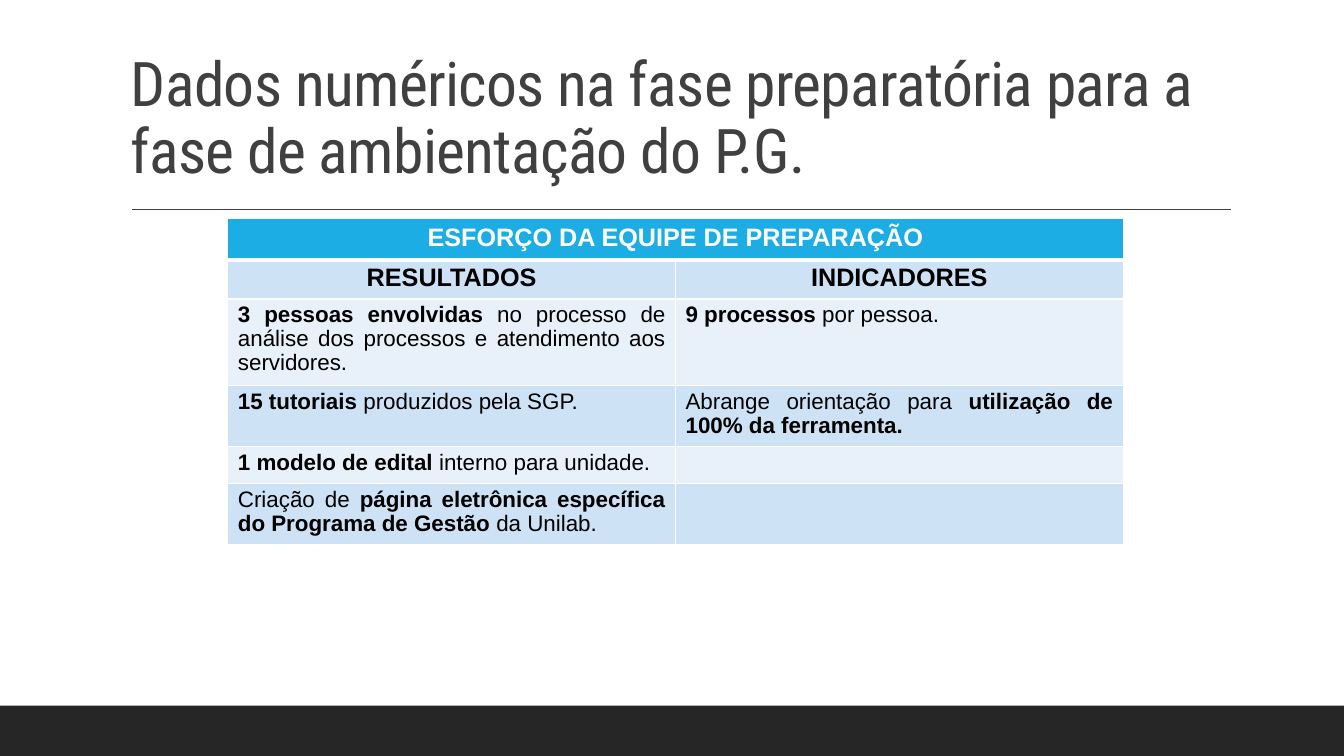
from lxml import etree
from pptx import Presentation
from pptx.dml.color import RGBColor
from pptx.enum.shapes import MSO_CONNECTOR, MSO_SHAPE
from pptx.enum.text import MSO_ANCHOR, PP_ALIGN
from pptx.oxml.ns import qn
from pptx.util import Inches, Pt

CENTER, JUSTIFY = PP_ALIGN.CENTER, PP_ALIGN.JUSTIFY
BOTTOM = MSO_ANCHOR.BOTTOM
RECTANGLE, STRAIGHT = MSO_SHAPE.RECTANGLE, MSO_CONNECTOR.STRAIGHT

COLORS = {"white": "FFFFFF", "black": "000000", "gray": "404040", "footer": "262626",
          "header": "1CADE4", "dark_band": "CDE3F5", "light_band": "E8F1FA"}
TITLE = "Dados numéricos na fase preparatória para a fase de ambientação do P.G."
BOLD, PLAIN = True, False
ROWS = [
    [[("ESFORÇO DA EQUIPE DE PREPARAÇÃO", BOLD)], []],
    [[("RESULTADOS", BOLD)], [("INDICADORES", BOLD)]],
    [[("3 pessoas envolvidas ", BOLD),
      ("no processo de análise dos processos e atendimento aos servidores.", PLAIN)],
     [("9 processos ", BOLD), ("por pessoa.", PLAIN)]],
    [[("15 tutoriais ", BOLD), ("produzidos pela SGP.", PLAIN)],
     [("Abrange orientação para ", PLAIN), ("utilização de 100% da ferramenta.", BOLD)]],
    [[("1 modelo de edital ", BOLD), ("interno para unidade.", PLAIN)], []],
    [[("Criação de ", PLAIN), ("página eletrônica específica do Programa de Gestão ", BOLD),
      ("da Unilab.", PLAIN)], []],
]
ROW_HEIGHTS = [0.41, 0.37, 0.84, 0.6, 0.35, 0.59]
COLUMN_WIDTH = 4.44
WIDTH, HEIGHT = 13.33, 7.5
FOOTER_HEIGHT = 0.5


def rgb(name):
    return RGBColor.from_string(COLORS[name])


def add_run(paragraph, text, color, **formats):
    run = paragraph.add_run()
    run.text = text
    for name, value in formats.items():
        setattr(run.font, name, value)
    run.font.color.rgb = rgb(color)
    return run


def add_borders(cell, bottom_width):
    properties = cell._tc.get_or_add_tcPr()
    widths = {"a:lnL": 1, "a:lnR": 1, "a:lnT": 1, "a:lnB": bottom_width}
    for position, (tag, width) in enumerate(widths.items()):
        line = etree.Element(qn(tag), w=str(Pt(width)))
        fill = etree.SubElement(line, qn("a:solidFill"))
        etree.SubElement(fill, qn("a:srgbClr"), val=COLORS["white"])
        properties.insert(position, line)


def add_frame(slide):
    footer = slide.shapes.add_shape(RECTANGLE, 0, Inches(HEIGHT - FOOTER_HEIGHT),
                                    Inches(WIDTH), Inches(FOOTER_HEIGHT))
    footer.shadow.inherit = False
    footer.fill.solid()
    footer.fill.fore_color.rgb = rgb("footer")
    footer.line.fill.background()
    rule = slide.shapes.add_connector(STRAIGHT, Inches(1.31), Inches(2.08),
                                      Inches(12.21), Inches(2.08))
    rule.line.color.rgb = rgb("gray")
    rule.line.width = Pt(1)
    etree.SubElement(rule._element.spPr, qn("a:effectLst"))


def add_title(slide):
    box = slide.shapes.add_textbox(Inches(1.2), Inches(0.31), Inches(11), Inches(1.59))
    frame = box.text_frame
    frame.word_wrap = True
    frame.vertical_anchor = BOTTOM
    paragraph = frame.paragraphs[0]
    paragraph.line_spacing = 0.9
    run = add_run(paragraph, TITLE, "gray", size=Pt(44), name="Roboto Condensed")
    run.font._element.set("spc", "-50")


def add_effort_table(slide):
    shape = slide.shapes.add_table(len(ROWS), 2, Inches(2.26), Inches(2.17),
                                   Inches(2 * COLUMN_WIDTH), Inches(sum(ROW_HEIGHTS)))
    table = shape.table
    for column in table.columns:
        column.width = Inches(COLUMN_WIDTH)
    for row_index, (cells, height) in enumerate(zip(ROWS, ROW_HEIGHTS)):
        table.rows[row_index].height = Inches(height)
        is_top = row_index == 0
        is_heading = row_index < 2
        band = "header" if is_top else "dark_band" if row_index % 2 else "light_band"
        size = Pt(18 if is_heading else 16)
        for column_index, runs in enumerate(cells):
            cell = table.cell(row_index, column_index)
            cell.fill.solid()
            cell.fill.fore_color.rgb = rgb(band)
            add_borders(cell, 3 if is_top else 1)
            paragraph = cell.text_frame.paragraphs[0]
            paragraph.alignment = CENTER if is_heading else JUSTIFY
            paragraph.line_spacing = 1.0 if is_top else 0.95
            for text, bold in runs:
                add_run(paragraph, text, "white" if is_top else "black",
                        size=size, bold=bold, name="Arial")
            if not runs:
                etree.SubElement(paragraph._p, qn("a:endParaRPr"), sz=str(int(size.pt * 100)))
    table.cell(0, 0).merge(table.cell(0, 1))


def main():
    presentation = Presentation()
    presentation.slide_width, presentation.slide_height = Inches(WIDTH), Inches(HEIGHT)
    slide = presentation.slides.add_slide(presentation.slide_layouts[6])
    add_frame(slide)
    add_title(slide)
    add_effort_table(slide)
    presentation.save("out.pptx")


if __name__ == "__main__":
    main()
